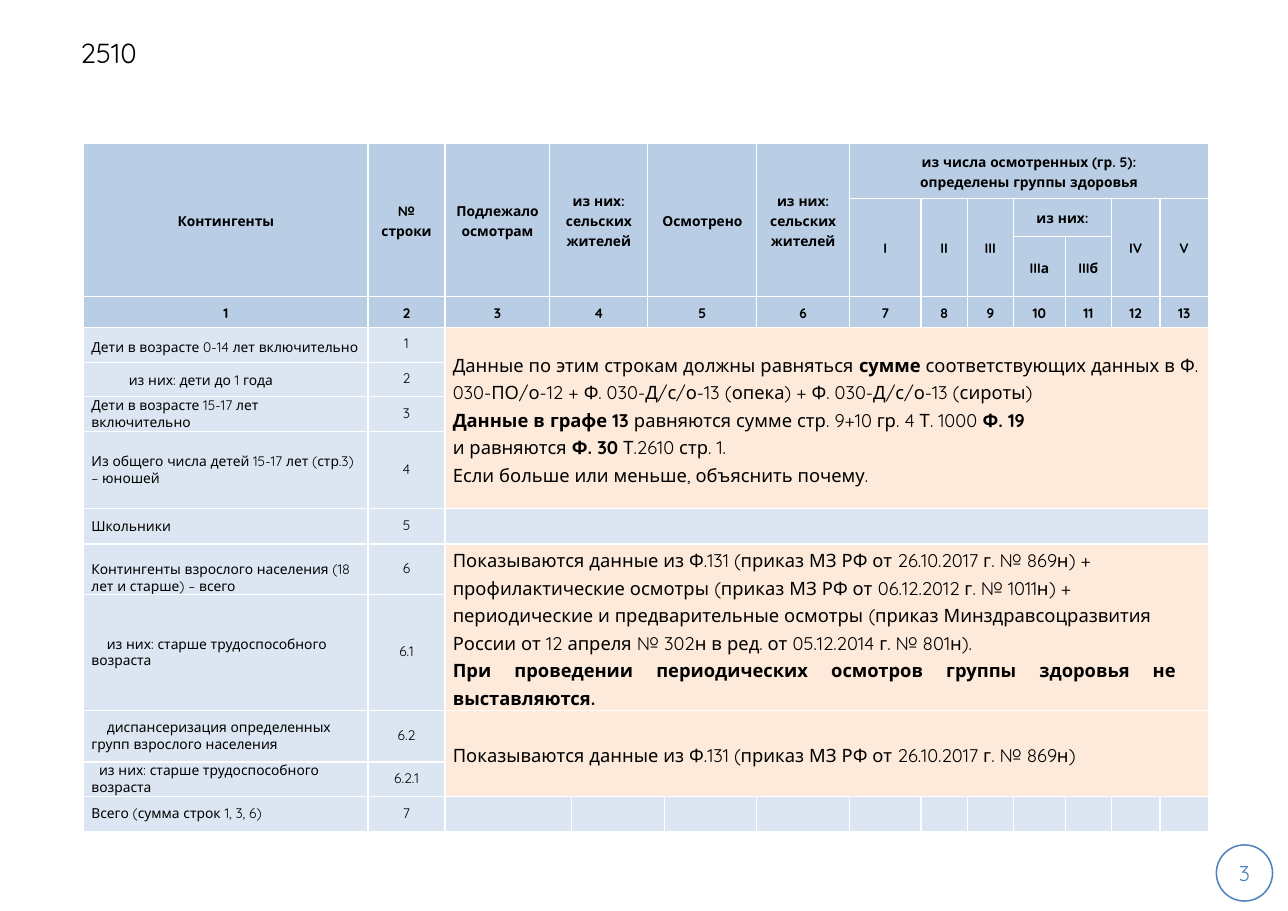
from pptx import Presentation
from pptx.dml.color import RGBColor
from pptx.enum.shapes import MSO_SHAPE
from pptx.enum.text import MSO_ANCHOR, PP_ALIGN
from pptx.oxml.ns import qn
from pptx.util import Inches, Pt
from lxml import etree

LEFT, CENTER, JUSTIFY = PP_ALIGN.LEFT, PP_ALIGN.CENTER, PP_ALIGN.JUSTIFY
MIDDLE, BOTTOM = MSO_ANCHOR.MIDDLE, MSO_ANCHOR.BOTTOM
OVAL = MSO_SHAPE.OVAL

FONT = "Quicksand"
BLACK, WHITE, ACCENT = "000000", "FFFFFF", "4F81BD"
HEADER_FILL, ROW_FILL, NOTE_FILL = "B9CDE5", "DCE6F2", "FDEADA"

COLUMN_WIDTHS = [2.58, 0.7, 0.95, 0.2, 0.69, 0.15, 0.84, 0.84,
                 0.65, 0.42, 0.42, 0.47, 0.42, 0.44, 0.44]
ROW_HEIGHTS = [0.5, 0.35, 0.54, 0.28, 0.32, 0.31, 0.32, 0.7,
               0.32, 0.46, 1.05, 0.47, 0.31, 0.32]
FIRST_DATA_ROW = 4

HEADERS = [
    (0, 0, 3, 1, ["Контингенты"]),
    (0, 1, 3, 1, ["№ строки"]),
    (0, 2, 3, 1, ["Подлежало осмотрам"]),
    (0, 3, 3, 2, ["из них:", "сельских жителей"]),
    (0, 5, 3, 2, ["Осмотрено"]),
    (0, 7, 3, 1, ["из них:", "сельских жителей"]),
    (0, 8, 1, 7, ["из числа осмотренных (гр. 5):", "определены группы здоровья"]),
    (1, 8, 2, 1, ["I"]),
    (1, 9, 2, 1, ["II"]),
    (1, 10, 2, 1, ["III"]),
    (1, 11, 1, 2, ["из них:"]),
    (1, 13, 2, 1, ["IV"]),
    (1, 14, 2, 1, ["V"]),
    (2, 11, 1, 1, ["IIIа"]),
    (2, 12, 1, 1, ["IIIб"]),
]
GRAPH_COLUMNS = [0, 1, 2, 3, 5, 7, 8, 9, 10, 11, 12, 13, 14]

CONTINGENTS = [
    ("1", "Дети в возрасте 0-14 лет включительно", Pt(14), 0, MIDDLE),
    ("2", "из них: дети до 1 года", 1.15, 0.34, MIDDLE),
    ("3", "Дети в возрасте 15-17 лет включительно", Pt(11), 0, MIDDLE),
    ("4", "Из общего числа детей 15-17 лет (стр.3) – юношей", Pt(11), 0, MIDDLE),
    ("5", "Школьники", Pt(11), 0, MIDDLE),
    ("6", "Контингенты взрослого населения (18 лет и старше) – всего", Pt(11), 0, BOTTOM),
    ("6.1", "из них: старше трудоспособного возраста", Pt(11), 0.14, MIDDLE),
    ("6.2", "диспансеризация определенных групп взрослого населения", Pt(11), 0.14, MIDDLE),
    ("6.2.1", "из них: старше трудоспособного возраста", Pt(11), 0.07, MIDDLE),
    ("7", "Всего (сумма строк 1, 3, 6)", Pt(11), 0, MIDDLE),
]

NOTES = [
    (4, 4, 0.07, [
        (LEFT, "Данные по этим строкам должны равняться *сумме* соответствующих данных в "
               "Ф. 030-ПО/о-12 + Ф. 030-Д/с/о-13 (опека) + Ф. 030-Д/с/о-13 (сироты)"),
        (LEFT, "*Данные в графе 13 *равняются сумме стр. 9+10 гр. 4 Т. 1000 *Ф. 19*\n"
               "и равняются *Ф. 30 *Т.2610 стр. 1.\n"
               "Если больше или меньше, объяснить почему."),
    ]),
    (9, 2, 0.29, [
        (LEFT, "Показываются данные из Ф.131 (приказ МЗ РФ от 26.10.2017 г. № 869н) + "
               "профилактические осмотры (приказ МЗ РФ от 06.12.2012 г. № 1011н) + "
               "периодические и предварительные осмотры (приказ Минздравсоцразвития "
               "России от 12 апреля № 302н в ред. от 05.12.2014 г. № 801н)."),
        (JUSTIFY, "*При проведении периодических осмотров группы здоровья не выставляются.*"),
    ]),
    (11, 2, 0.07, [
        (LEFT, "Показываются данные из Ф.131 (приказ МЗ РФ от 26.10.2017 г. № 869н)"),
    ]),
]


def color(value):
    return RGBColor.from_string(value)


class SlideBuilder:
    def __init__(self, page):
        self.page = page

    def runs(self, para, text, size, ink=BLACK, bold=False):
        for part_index, part in enumerate(text.split("*")):
            for line_index, line in enumerate(part.split("\n")):
                if line_index:
                    para.add_line_break()
                if line:
                    span = para.add_run()
                    span.text = line
                    span.font.name = FONT
                    span.font.size = Pt(size)
                    span.font.bold = bold or part_index % 2 == 1
                    span.font.color.rgb = color(ink)

    def title(self, text):
        box = self.page.shapes.title
        box.left, box.top = Inches(0.73), Inches(0)
        box.width, box.height = Inches(10.97), Inches(0.95)
        frame = box.text_frame
        frame.margin_left = 0
        frame.vertical_anchor = MIDDLE
        para = frame.paragraphs[0]
        para.alignment = LEFT
        self.runs(para, text, 18)

    def number_badge(self, text):
        box = self.page.shapes.add_shape(
            OVAL, Inches(11.04), Inches(7.67), Inches(0.51), Inches(0.51))
        box.shadow.inherit = False
        box.fill.background()
        box.line.color.rgb = color(ACCENT)
        box.line.width = Pt(1)
        frame = box.text_frame
        frame.margin_left = frame.margin_right = frame.margin_top = frame.margin_bottom = 0
        frame.vertical_anchor = MIDDLE
        para = frame.paragraphs[0]
        para.alignment = CENTER
        self.runs(para, text, 14, ACCENT)

    def table(self):
        rows, columns = len(ROW_HEIGHTS), len(COLUMN_WIDTHS)
        frame = self.page.shapes.add_table(
            rows, columns, Inches(0.76), Inches(1.3),
            Inches(sum(COLUMN_WIDTHS)), Inches(sum(ROW_HEIGHTS)))
        table = frame.table
        table.first_row = table.horz_banding = False
        for column, width in zip(table.columns, COLUMN_WIDTHS):
            column.width = Inches(width)
        for row, height in zip(table.rows, ROW_HEIGHTS):
            row.height = Inches(height)
        for row in range(rows):
            for cell in table.rows[row].cells:
                self.cell_style(cell, HEADER_FILL if row < FIRST_DATA_ROW else ROW_FILL)
        return table

    def cell_style(self, cell, fill):
        cell.margin_left = cell.margin_right = Inches(0.07)
        cell.margin_top = cell.margin_bottom = 0
        cell.vertical_anchor = MIDDLE
        properties = cell._tc.get_or_add_tcPr()
        for side in ("lnL", "lnR", "lnT", "lnB"):
            border = etree.SubElement(properties, qn("a:" + side), w=str(Pt(1)))
            paint = etree.SubElement(border, qn("a:solidFill"))
            etree.SubElement(paint, qn("a:srgbClr"), val=WHITE)
        cell.fill.solid()
        cell.fill.fore_color.rgb = color(fill)
        para = cell.text_frame.paragraphs[0]
        etree.SubElement(para._p, qn("a:endParaRPr"), sz="900")

    def cell_text(self, cell, paragraphs, size, spacing, bold=False, indent=0):
        frame = cell.text_frame
        for index, (alignment, text) in enumerate(paragraphs):
            para = frame.add_paragraph() if index else frame.paragraphs[0]
            para.alignment = alignment
            para.line_spacing = spacing
            if indent:
                para._p.get_or_add_pPr().set("indent", str(Inches(indent)))
            self.runs(para, text, size, bold=bold)

    def merged(self, table, row, column, height, width):
        cell = table.cell(row, column)
        if height * width > 1:
            cell.merge(table.cell(row + height - 1, column + width - 1))
        return cell


def main():
    deck = Presentation()
    deck.slide_width, deck.slide_height = Inches(11.69), Inches(8.27)
    builder = SlideBuilder(deck.slides.add_slide(deck.slide_layouts[5]))
    builder.number_badge("3")
    builder.title("2510")
    table = builder.table()

    for row, column, height, width, lines in HEADERS:
        cell = builder.merged(table, row, column, height, width)
        builder.cell_text(cell, [(CENTER, line) for line in lines], 9, 1.15, bold=True)
    for number, column in enumerate(GRAPH_COLUMNS, 1):
        cell = builder.merged(table, 3, column, 1, 2 if column in (3, 5) else 1)
        builder.cell_text(cell, [(CENTER, str(number))], 9, 1.15, bold=True)

    for row, (number, label, spacing, indent, anchor) in enumerate(CONTINGENTS, FIRST_DATA_ROW):
        cell = table.cell(row, 0)
        cell.vertical_anchor = anchor
        builder.cell_text(cell, [(LEFT, label)], 9, spacing, indent=indent)
        builder.cell_text(table.cell(row, 1), [(CENTER, number)], 9, Pt(10))

    for row, height, margin, paragraphs in NOTES:
        cell = builder.merged(table, row, 2, height, 13)
        cell.margin_right = Inches(margin)
        cell.fill.fore_color.rgb = color(NOTE_FILL)
        builder.cell_text(cell, paragraphs, 12, Pt(18))
    builder.merged(table, 8, 2, 1, 13)
    for column in (2, 4):
        builder.merged(table, 13, column, 1, 2)

    deck.save("out.pptx")


if __name__ == "__main__":
    main()
